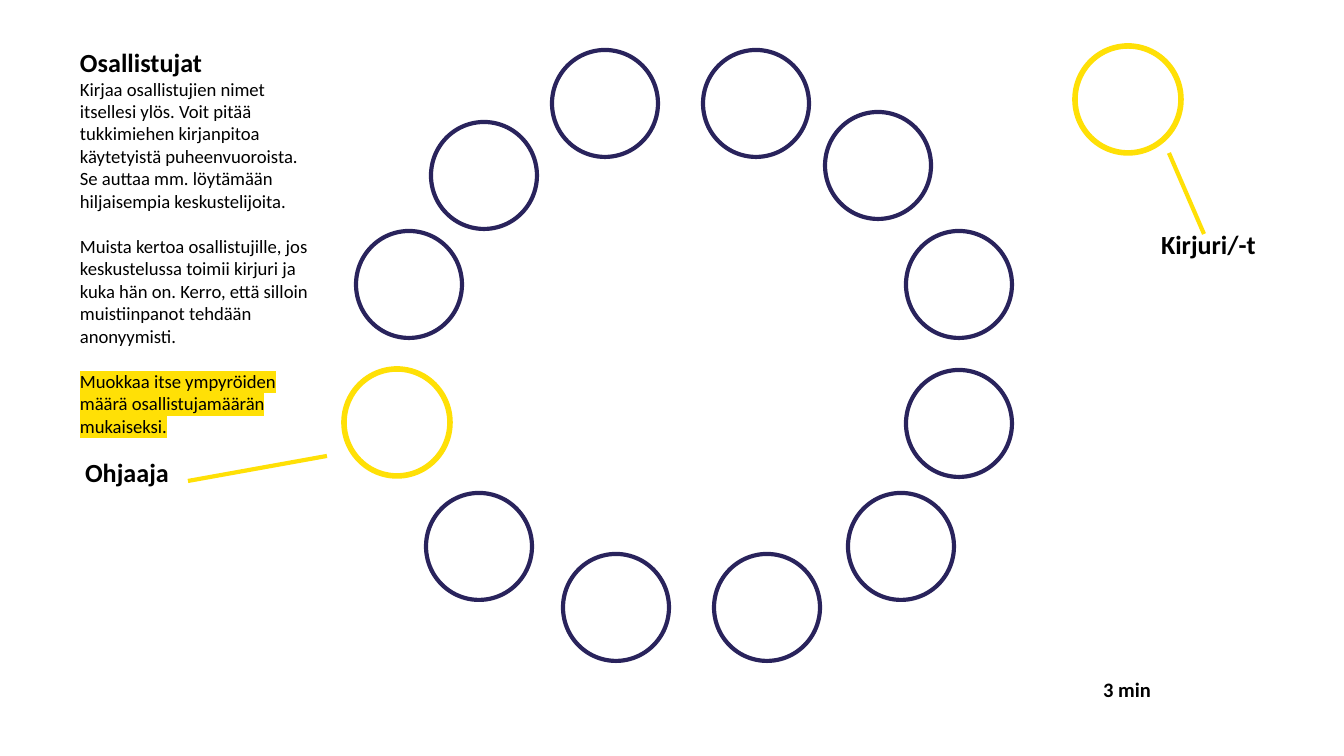
import pptx
import pptx.util
import pptx.dml.color
import pptx.enum.shapes
import pptx.enum.text
import pptx.oxml.ns
import lxml.etree
import dataclasses


@dataclasses.dataclass(frozen=True)
class Theme:
    navy: str = "29235C"
    yellow: str = "FFE006"
    black: str = "000000"
    font: str = "Calibri"
    heading: int = 14
    body: int = 10
    timing: int = 11
    thin: float = 2.25
    thick: float = 3


theme = Theme()
PX = 914400 / 134.4
rgb = pptx.dml.color.RGBColor.from_string
qn = pptx.oxml.ns.qn


def px(*values):
    return [pptx.util.Emu(round(v * PX)) for v in values]


def add_text(box, inset, paragraphs):
    tf = s.shapes.add_textbox(*px(*box)).text_frame
    tf.word_wrap = True
    tf.margin_left = tf.margin_right = tf.margin_top = tf.margin_bottom = px(inset)[0]
    for i, (text, size, bold) in enumerate(paragraphs):
        p = tf.paragraphs[0] if i == 0 else tf.add_paragraph()
        p.text = text
        f = p.runs[0].font
        f.name = theme.font
        f.size = pptx.util.Pt(size)
        f.bold = bold
        f.color.rgb = rgb(theme.black)
    return tf


prs = pptx.Presentation()
prs.slide_width, prs.slide_height = px(1344, 756)
s = prs.slides.add_slide(prs.slide_layouts[6])

tf = add_text((58, 24, 278, 437), 22, [
    ("Osallistujat", theme.heading, True),
    ("Kirjaa osallistujien nimet itsellesi ylös. Voit pitää tukkimiehen kirjanpitoa "
     "käytetyistä puheenvuoroista. Se auttaa mm. löytämään hiljaisempia keskustelijoita.",
     theme.body, False),
    ("Muista kertoa osallistujille, jos keskustelussa toimii kirjuri ja kuka hän on. "
     "Kerro, että silloin muistiinpanot tehdään anonyymisti.", theme.body, False),
    ("Muokkaa itse ympyröiden määrä osallistujamäärän mukaiseksi.", theme.body, False),
])
for p in tf.paragraphs[2:]:
    p.space_before = pptx.util.Pt(12.2)
fill = tf.paragraphs[-1].runs[0].font._element.find(qn("a:solidFill"))
highlight = lxml.etree.Element(qn("a:highlight"))
lxml.etree.SubElement(highlight, qn("a:srgbClr"), val=theme.yellow)
fill.addnext(highlight)

participants = [
    (356, 231), (703, 50), (431, 122), (426, 493), (563, 554), (714, 554),
    (848, 493), (906, 370), (906, 231), (825, 112), (552, 50),
]
facilitator, scribe = (344, 369), (1075, 46)
for x, y in participants + [facilitator, scribe]:
    sp = s.shapes.add_shape(pptx.enum.shapes.MSO_SHAPE.OVAL, *px(x, y, 106, 107))
    sp.shadow.inherit = False
    sp.fill.background()
    is_participant = (x, y) in participants
    sp.line.color.rgb = rgb(theme.navy if is_participant else theme.yellow)
    sp.line.width = pptx.util.Pt(theme.thin if is_participant else theme.thick)

for ends in [(188, 481, 327, 456), (1169, 153, 1204, 234)]:
    line = s.shapes.add_connector(pptx.enum.shapes.MSO_CONNECTOR.STRAIGHT, *px(*ends))
    line.line.color.rgb = rgb(theme.yellow)
    line.line.width = pptx.util.Pt(theme.thin)
    lxml.etree.SubElement(line._element.spPr, qn("a:effectLst"))

for label, x, y in [("Ohjaaja", 63, 441), ("Kirjuri/-t", 1139, 213)]:
    add_text((x, y, 173, 255), 22, [(label, theme.heading, True)])

p = add_text((1090, 660, 132, 52), 13, [("3 min", theme.timing, True)]).paragraphs[0]
p.alignment = pptx.enum.text.PP_ALIGN.JUSTIFY
p.line_spacing = 1.15

prs.save("out.pptx")
